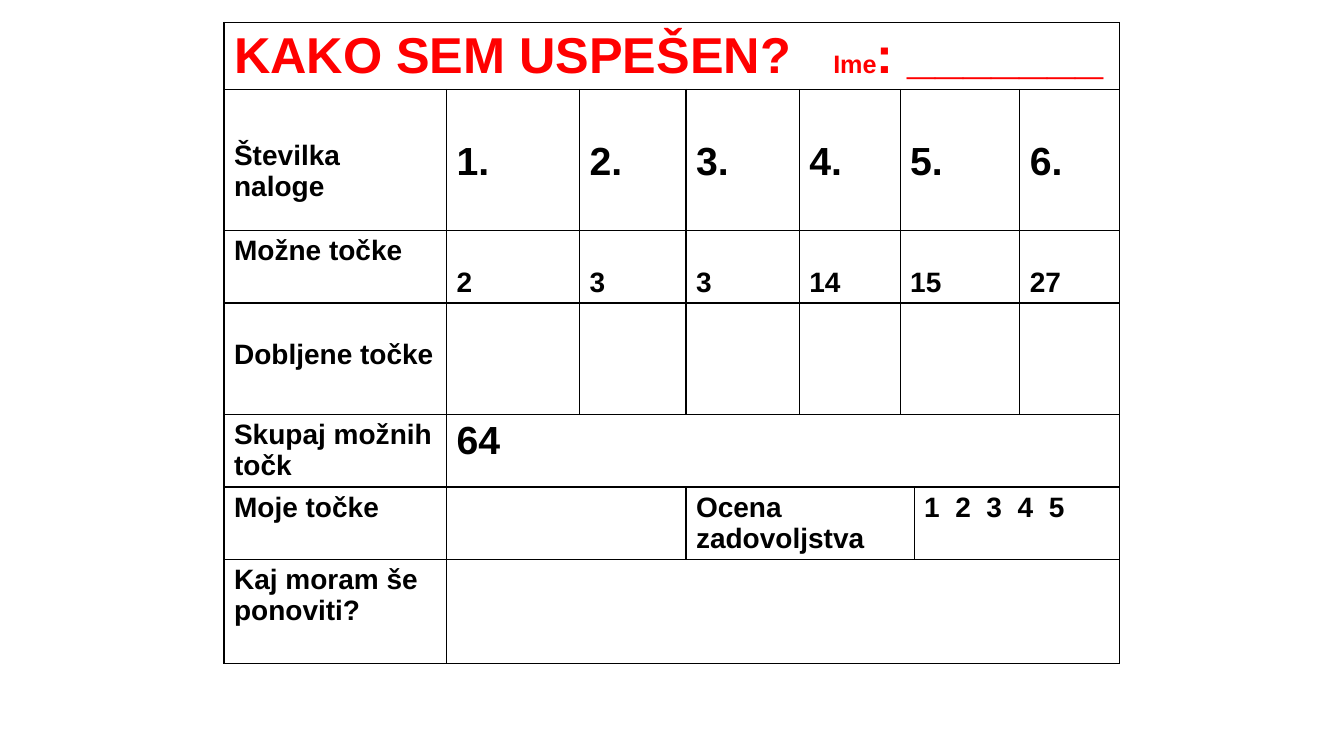
import pptx
import pptx.util
import pptx.dml.color
import pptx.oxml
import pptx.oxml.ns
from dataclasses import dataclass
from lxml import etree

Pt = pptx.util.Pt
qn = pptx.oxml.ns.qn


@dataclass(frozen=True)
class Theme:
    font: str = "Arial"
    ink: str = "000000"
    accent: str = "FF0000"
    paper: str = "FFFFFF"
    title: float = 36
    number: float = 28
    label: float = 20
    name: float = 18


theme = Theme()


def style(paragraph, size, color=theme.ink, tabs=()):
    """Format a paragraph and set its tab stops, in points."""
    if tabs:
        tab_list = etree.Element(qn("a:tabLst"))
        for stop in tabs:
            etree.SubElement(tab_list, qn("a:tab"), pos=str(Pt(stop)), algn="l")
        paragraph._p.get_or_add_pPr().insert(0, tab_list)
    paragraph.font.name = theme.font
    paragraph.font.size = Pt(size)
    paragraph.font.bold = True
    paragraph.font.color.rgb = pptx.dml.color.RGBColor.from_string(color)


def outline(cell):
    """Draw a one-point line on all four sides of a cell."""
    for place, side in enumerate(("lnL", "lnR", "lnT", "lnB")):
        line = etree.Element(qn(f"a:{side}"), w=str(Pt(1)))
        fill = etree.SubElement(line, qn("a:solidFill"))
        etree.SubElement(fill, qn("a:srgbClr"), val=theme.ink)
        cell._tc.get_or_add_tcPr().insert(place, line)


# Slide
presentation = pptx.Presentation()
presentation.slide_width, presentation.slide_height = Pt(960), Pt(540)
slide = presentation.slides.add_slide(presentation.slide_layouts[6])

# Score sheet grid
widths = [159, 95, 76, 81, 72, 10, 75.5, 71.5]
heights = [48, 100.5, 52, 79.5, 52, 51.5, 74.5]
sheet = slide.shapes.add_table(
    len(heights), len(widths), Pt(160), Pt(16), Pt(sum(widths)), Pt(sum(heights))
).table
sheet.first_row = sheet.horz_banding = False
for column, width in zip(sheet.columns, widths):
    column.width = Pt(width)
for row, height in zip(sheet.rows, heights):
    row.height = Pt(height)

# Plain white cells with black borders
for cell in sheet.iter_cells():
    cell.fill.solid()
    cell.fill.fore_color.rgb = pptx.dml.color.RGBColor.from_string(theme.paper)
    outline(cell)
    cell.margin_bottom = Pt(2)
    style(cell.text_frame.paragraphs[0], theme.name)

# Merged cells: row, first column, last column
merges = [(0, 0, 7), (1, 5, 6), (2, 5, 6), (3, 5, 6), (4, 1, 7),
          (5, 1, 2), (5, 3, 5), (5, 6, 7), (6, 1, 7)]
for row, first, last in merges:
    sheet.cell(row, first).merge(sheet.cell(row, last))

# Heading with the name line
heading = sheet.cell(0, 0).text_frame.paragraphs[0]
style(heading, theme.title, theme.accent, tabs=[428])
for words, size in (("KAKO SEM USPEŠEN?\t", theme.title), ("Ime", theme.name),
                    (": _______", theme.title)):
    run = heading.add_run()
    run.text = words
    run.font.size = Pt(size)

# Entries: row, column, text, size, top margin
entries = [
    (1, 0, "Številka naloge", theme.label, 36),
    (2, 0, "Možne točke", theme.label, 3.6),
    (3, 0, "Dobljene točke", theme.label, 26),
    (4, 0, "Skupaj možnih točk", theme.label, 3.6),
    (4, 1, "64", theme.number, 3.6),
    (5, 0, "Moje točke", theme.label, 3.6),
    (5, 3, "Ocena zadovoljstva", theme.label, 3.6),
    (6, 0, "Kaj moram še ponoviti?", theme.label, 3.6),
]
task_columns = [1, 2, 3, 4, 5, 7]
possible_points = [2, 3, 3, 14, 15, 27]
for task, (column, points) in enumerate(zip(task_columns, possible_points), start=1):
    entries.append((1, column, f"{task}.", theme.number, 36))
    entries.append((2, column, str(points), theme.label, 26))

for row, column, words, size, top in entries:
    cell = sheet.cell(row, column)
    cell.text = words
    cell.margin_top = Pt(top)
    style(cell.text_frame.paragraphs[0], size)

# Satisfaction grades, evenly spaced
grades = sheet.cell(5, 6)
grades.text = "\t".join(str(grade) for grade in range(1, 6))
style(grades.text_frame.paragraphs[0], theme.label,
      tabs=[22.25 * step for step in range(1, 5)])

presentation.save("out.pptx")
